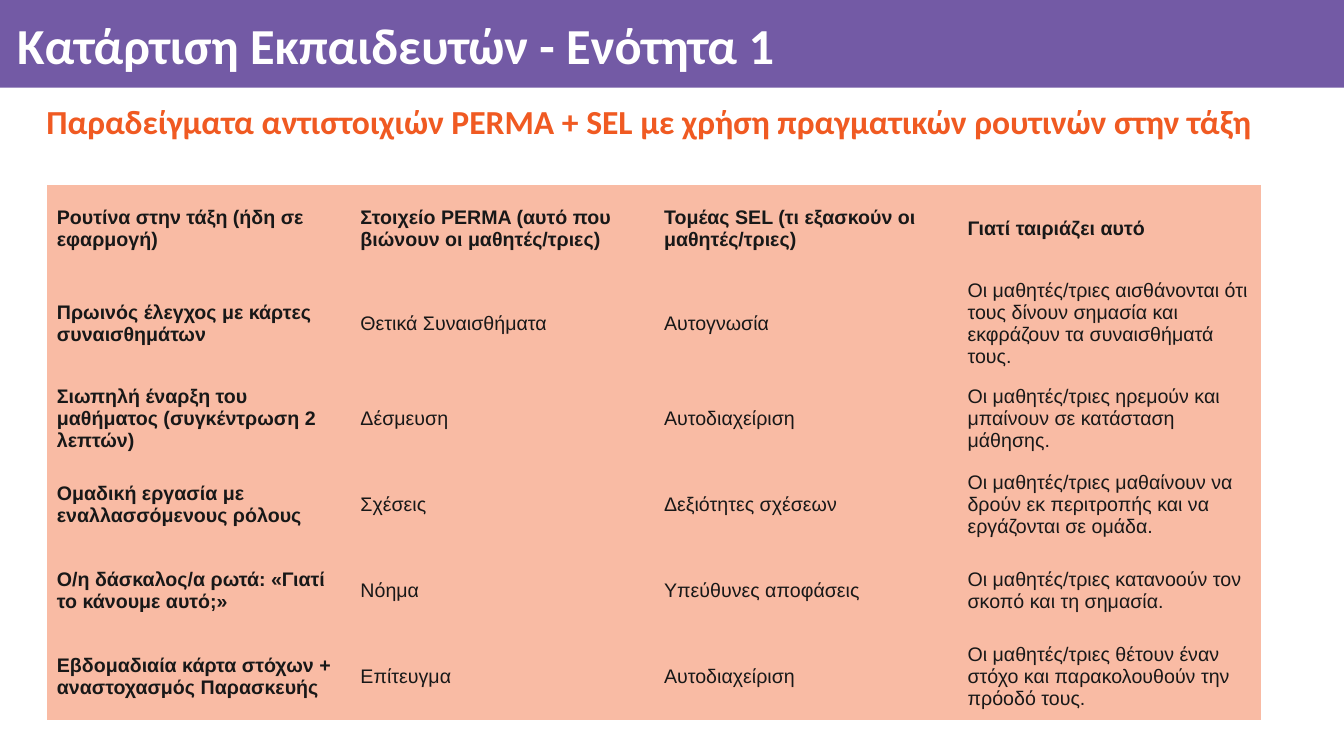
from pptx import Presentation
from pptx import util as u
from pptx.dml.color import RGBColor
from pptx.enum import shapes, text

PURPLE = RGBColor(0x73, 0x5A, 0xA5)
ORANGE = RGBColor(0xF0, 0x5A, 0x22)
PEACH = RGBColor(0xF9, 0xBB, 0xA4)
INK = RGBColor(0x18, 0x18, 0x18)
WHITE = RGBColor(0xFF, 0xFF, 0xFF)
NO_STYLE = "{2D5ABB26-0587-4C30-8999-92F81FD0307C}"

ROUTINES = [
    ("Ρουτίνα στην τάξη (ήδη σε εφαρμογή)",
     "Στοιχείο PERMA (αυτό που βιώνουν οι μαθητές/τριες)",
     "Τομέας SEL (τι εξασκούν οι μαθητές/τριες)",
     "Γιατί ταιριάζει αυτό"),
    ("Πρωινός έλεγχος με κάρτες συναισθημάτων",
     "Θετικά Συναισθήματα",
     "Αυτογνωσία",
     "Οι μαθητές/τριες αισθάνονται ότι τους δίνουν σημασία και "
     "εκφράζουν τα συναισθήματά τους."),
    ("Σιωπηλή έναρξη του μαθήματος (συγκέντρωση 2 λεπτών)",
     "Δέσμευση",
     "Αυτοδιαχείριση",
     "Οι μαθητές/τριες ηρεμούν και μπαίνουν σε κατάσταση μάθησης."),
    ("Ομαδική εργασία με εναλλασσόμενους ρόλους",
     "Σχέσεις",
     "Δεξιότητες σχέσεων",
     "Οι μαθητές/τριες μαθαίνουν να δρούν εκ περιτροπής και να "
     "εργάζονται σε ομάδα."),
    ("Ο/η δάσκαλος/α ρωτά: «Γιατί το κάνουμε αυτό;»",
     "Νόημα",
     "Υπεύθυνες αποφάσεις",
     "Οι μαθητές/τριες κατανοούν τον σκοπό και τη σημασία."),
    ("Εβδομαδιαία κάρτα στόχων + αναστοχασμός Παρασκευής",
     "Επίτευγμα",
     "Αυτοδιαχείριση",
     "Οι μαθητές/τριες θέτουν έναν στόχο και παρακολουθούν την πρόοδό τους."),
]


class LessonSlide:
    heading_font = "Calibri"
    table_font = "Arial"

    def __init__(self, deck):
        self.slide = deck.slides.add_slide(deck.slide_layouts[6])

    def style(self, paragraph, font_name, size, color, bold):
        font = paragraph.font
        font.name, font.size, font.bold = font_name, u.Pt(size), bold
        font.color.rgb = color

    def band(self, left, top, width, height, color):
        band = self.slide.shapes.add_shape(
            shapes.MSO_SHAPE.RECTANGLE,
            u.Cm(left), u.Cm(top), u.Cm(width), u.Cm(height))
        band.shadow.inherit = False
        band.fill.solid()
        band.fill.fore_color.rgb = color
        band.line.fill.background()

    def heading(self, left, top, width, height, wording, size, color, inset,
                align=text.PP_ALIGN.LEFT):
        heading = self.slide.shapes.add_textbox(
            u.Cm(left), u.Cm(top), u.Cm(width), u.Cm(height))
        frame = heading.text_frame
        frame.word_wrap = True
        frame.vertical_anchor = text.MSO_ANCHOR.MIDDLE
        frame.margin_left = u.Cm(inset)
        paragraph = frame.paragraphs[0]
        paragraph.text = wording
        paragraph.alignment = align
        paragraph.line_spacing = 0.9
        self.style(paragraph, self.heading_font, size, color, True)

    def table(self, left, top, column_width, row_height, rows):
        columns = len(rows[0])
        table = self.slide.shapes.add_table(
            len(rows), columns, u.Cm(left), u.Cm(top),
            u.Cm(column_width * columns), u.Cm(row_height * len(rows))).table
        table.horz_banding = False
        table._tbl.tblPr[0].text = NO_STYLE
        for r, row in enumerate(rows):
            for c, wording in enumerate(row):
                cell = table.cell(r, c)
                cell.fill.solid()
                cell.fill.fore_color.rgb = PEACH
                cell.vertical_anchor = text.MSO_ANCHOR.MIDDLE
                cell.text = wording
                self.style(cell.text_frame.paragraphs[0], self.table_font,
                           14, INK, r == 0 or c == 0)


def main():
    deck = Presentation()
    deck.slide_width, deck.slide_height = u.Cm(33.87), u.Cm(19.05)
    lesson = LessonSlide(deck)
    lesson.band(0, 0, 33.87, 2.21, PURPLE)
    lesson.heading(0.28, 0.23, 33.17, 1.98, "Κατάρτιση Εκπαιδευτών - Ενότητα 1",
                   36, WHITE, 0.15)
    lesson.heading(0.28, 2.36, 33.17, 1.52,
                   "Παραδείγματα αντιστοιχιών PERMA + SEL με χρήση "
                   "πραγματικών ρουτινών στην τάξη",
                   24, ORANGE, 0.89, text.PP_ALIGN.JUSTIFY)
    lesson.table(1.18, 4.67, 7.65, 2.17, ROUTINES)
    deck.save("out.pptx")


if __name__ == "__main__":
    main()
